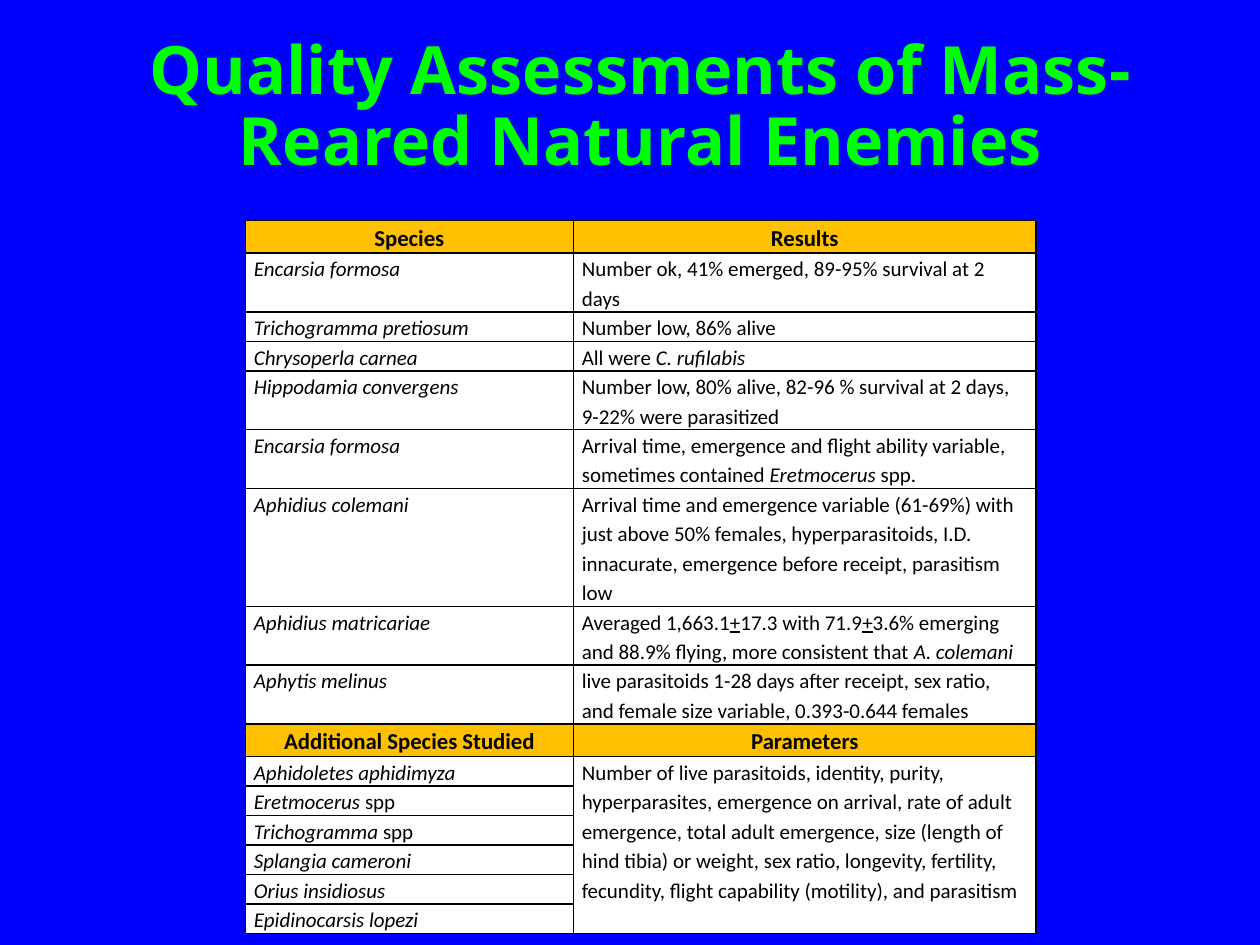
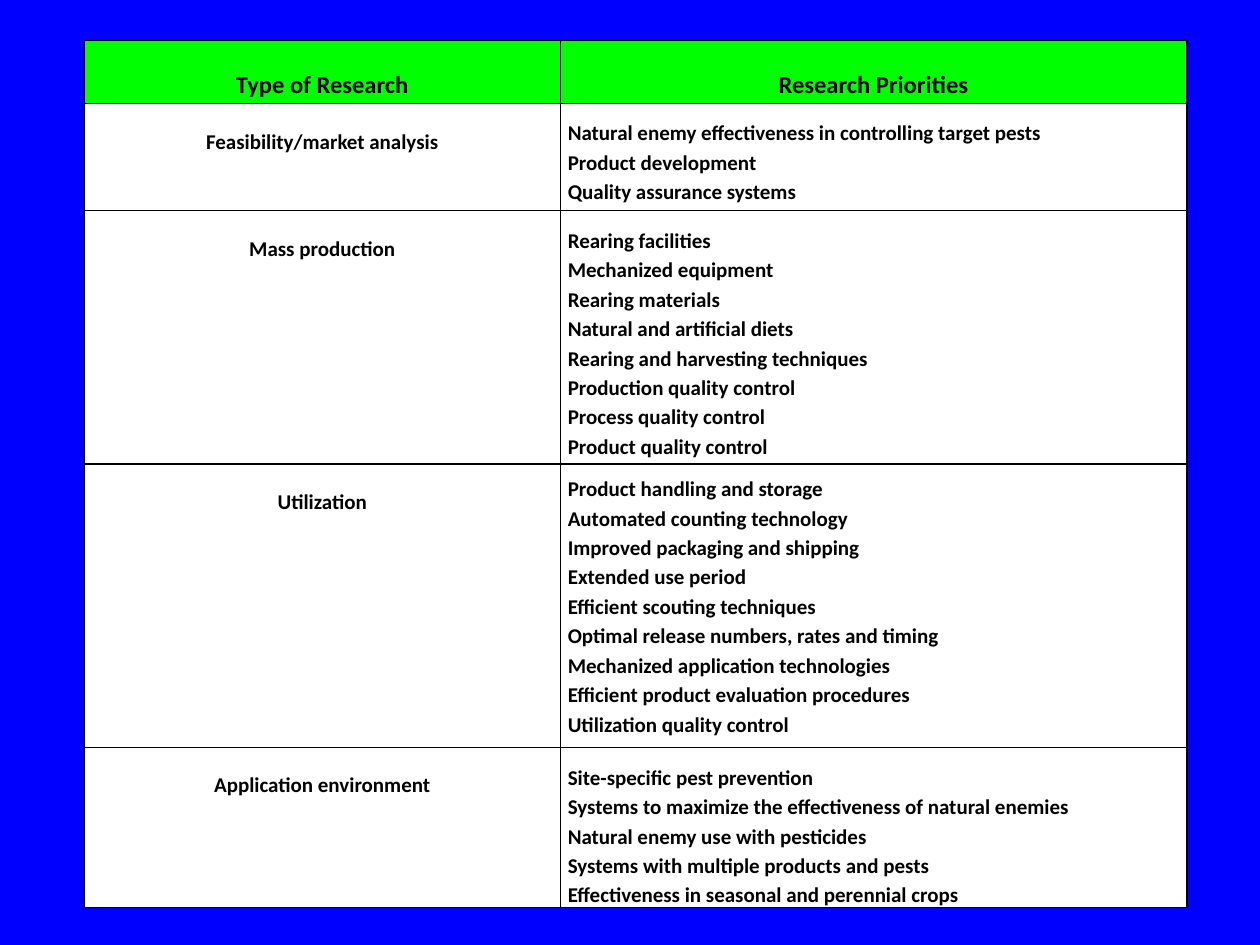
import lxml.etree
import pptx
import pptx.dml.color
import pptx.enum.text
import pptx.oxml.ns
import pptx.util

Pt = pptx.util.Pt
ALIGN = pptx.enum.text.PP_ALIGN

COLORS = {
    "background": "0000FF",
    "title": "00FF00",
    "species_header": "FFC000",
    "research_header": "00FF00",
    "body": "FFFFFF",
    "ink": "000000",
}
BODY_FONT = "Calibri"
TITLE_FONT = "Open Sans"
BODY_SIZE = 12
LINE_SPACING = 1.15

SPECIES_HEADER_HEIGHT = 18.6
SPECIES_LINE_HEIGHT = 16.8

SPECIES_RESULTS = [
    ("Encarsia formosa", 2, ["Number ok, 41% emerged, 89-95% survival at 2 days"]),
    ("Trichogramma pretiosum", 1, ["Number low, 86% alive"]),
    ("Chrysoperla carnea", 1, ["All were ", ("C. rufilabis", "i")]),
    ("Hippodamia convergens", 2,
     ["Number low, 80% alive, 82-96 % survival at 2 days, 9-22% were parasitized"]),
    ("Encarsia formosa", 2,
     ["Arrival time, emergence and flight ability variable, sometimes contained ",
      ("Eretmocerus", "i"), " spp."]),
    ("Aphidius colemani", 4,
     ["Arrival time and emergence variable (61-69%) with just above 50% females, "
      "hyperparasitoids, I.D. innacurate, emergence before receipt, parasitism low"]),
    ("Aphidius matricariae", 2,
     ["Averaged 1,663.1", ("+", "u"), "17.3 with 71.9", ("+", "u"),
      "3.6% emerging and 88.9% flying, more consistent that ", ("A. colemani", "i")]),
    ("Aphytis melinus", 2,
     ["live parasitoids 1-28 days after receipt, sex ratio, and female size variable, "
      "0.393-0.644 females"]),
]
ADDITIONAL_SPECIES = [
    [("Aphidoletes aphidimyza", "i")],
    [("Eretmocerus ", "i"), "spp"],
    [("Trichogramma ", "i"), "spp"],
    [("Splangia cameroni", "i")],
    [("Orius insidiosus", "i")],
    [("Epidinocarsis lopezi", "i")],
]
PARAMETERS = (
    "Number of live parasitoids, identity, purity, hyperparasites, emergence on arrival, "
    "rate of adult emergence, total adult emergence, size (length of hind tibia) or weight, "
    "sex ratio, longevity, fertility, fecundity, flight capability (motility), and parasitism"
)

RESEARCH_PRIORITIES = [
    ("Feasibility/market analysis", 61.2, 10, 1.0, [
        "Natural enemy effectiveness in controlling target pests",
        "Product development",
        "Quality assurance systems",
    ]),
    ("Mass production", 144.72, 8, LINE_SPACING, [
        "Rearing facilities",
        "Mechanized equipment",
        "Rearing materials",
        "Natural and artificial diets",
        "Rearing and harvesting techniques",
        "Production quality control",
        "Process quality control",
        "Product quality control",
    ]),
    ("Utilization", 162, 10, Pt(12), [
        "Product handling and storage",
        "Automated counting technology",
        "Improved packaging and shipping",
        "Extended use period",
        "Efficient scouting techniques",
        "Optimal release numbers, rates and timing",
        "Mechanized application technologies",
        "Efficient product evaluation procedures",
        "Utilization quality control",
    ]),
    ("Application environment", 91.44, 8, LINE_SPACING, [
        "Site-specific pest prevention",
        "Systems to maximize the effectiveness of natural enemies",
        "Natural enemy use with pesticides",
        "Systems with multiple products and pests",
        "Effectiveness in seasonal and perennial crops",
    ]),
]


def rgb(name):
    """Return the named palette colour."""
    return pptx.dml.color.RGBColor.from_string(COLORS[name])


def add_slide(deck):
    """Add a blank slide with the shared background."""
    slide = deck.slides.add_slide(deck.slide_layouts[6])
    slide.background.fill.solid()
    slide.background.fill.fore_color.rgb = rgb("background")
    return slide


def style_font(font, name, size, color, bold):
    """Apply the face, size, colour and weight."""
    font.name = name
    font.size = Pt(size)
    font.color.rgb = rgb(color)
    font.bold = bold


def add_title(slide, text, left, top, width, height):
    """Place the slide title, centred in its box."""
    frame = slide.shapes.add_textbox(Pt(left), Pt(top), Pt(width), Pt(height)).text_frame
    frame.word_wrap = True
    frame.vertical_anchor = pptx.enum.text.MSO_ANCHOR.MIDDLE
    heading = frame.paragraphs[0]
    heading.text = text
    heading.alignment = ALIGN.CENTER
    heading.line_spacing = 0.9
    style_font(heading.font, TITLE_FONT, 38, "title", True)


def add_grid(slide, left, top, widths, heights):
    """Add an unstyled table with the given column widths and row heights."""
    grid = slide.shapes.add_table(len(heights), len(widths), Pt(left), Pt(top),
                                  Pt(sum(widths)), Pt(sum(heights))).table
    grid.first_row = grid.horz_banding = False
    for column, width in zip(grid.columns, widths):
        column.width = Pt(width)
    for row, height in zip(grid.rows, heights):
        row.height = Pt(height)
    return grid


def rule_cell(cell, top=1, bottom=1):
    """Draw the four cell borders, before the fill in the XML order."""
    properties = cell._tc.get_or_add_tcPr()
    for side, weight in (("L", 1), ("R", 1), ("T", top), ("B", bottom)):
        border = lxml.etree.SubElement(properties, pptx.oxml.ns.qn(f"a:ln{side}"),
                                       w=str(Pt(weight)))
        fill = lxml.etree.SubElement(border, pptx.oxml.ns.qn("a:solidFill"))
        lxml.etree.SubElement(fill, pptx.oxml.ns.qn("a:srgbClr"), val=COLORS["ink"])


def fill_cell(cell, lines, fill="body", size=BODY_SIZE, bold=False, align=ALIGN.LEFT,
              spacing=LINE_SPACING, first_spacing=None, inset=4.9, inset_top=0,
              top_rule=1, bottom_rule=1):
    """Write lines of plain or styled pieces into a ruled, filled cell."""
    rule_cell(cell, top_rule, bottom_rule)
    cell.fill.solid()
    cell.fill.fore_color.rgb = rgb(fill)
    cell.margin_left = cell.margin_right = Pt(inset)
    cell.margin_top, cell.margin_bottom = Pt(inset_top), 0
    for index, pieces in enumerate(lines):
        frame = cell.text_frame
        line = frame.add_paragraph() if index else frame.paragraphs[0]
        line.alignment = align
        line.line_spacing = first_spacing if first_spacing and not index else spacing
        style_font(line.font, BODY_FONT, size, "ink", bold)
        for piece in pieces:
            text, style = (piece, "") if isinstance(piece, str) else piece
            run = line.add_run()
            run.text = text
            if style == "i":
                run.font.italic = True
            elif style == "u":
                run.font.underline = True


def add_species_table(slide, left, top, widths):
    """Place the species results and the additional species below them."""
    result_heights = [count * SPECIES_LINE_HEIGHT for _, count, _ in SPECIES_RESULTS]
    additional_heights = [SPECIES_LINE_HEIGHT] * len(ADDITIONAL_SPECIES)
    grid = add_grid(slide, left, top, widths,
                    [SPECIES_HEADER_HEIGHT, *result_heights,
                     SPECIES_HEADER_HEIGHT, *additional_heights])
    second_header = len(SPECIES_RESULTS) + 1
    headers = [(0, ("Species", "Results"), 1),
               (second_header, ("Additional Species Studied", "Parameters"), 1.5)]
    for row, labels, top_rule in headers:
        for column, label in enumerate(labels):
            fill_cell(grid.cell(row, column), [[label]], "species_header", 13, True,
                      ALIGN.CENTER, top_rule=top_rule)
    for row, (species, _, result) in enumerate(SPECIES_RESULTS, 1):
        bottom_rule = 1.5 if row == second_header - 1 else 1
        fill_cell(grid.cell(row, 0), [[(species, "i")]], bottom_rule=bottom_rule)
        fill_cell(grid.cell(row, 1), [result], bottom_rule=bottom_rule)
    first_additional = second_header + 1
    last_row = second_header + len(ADDITIONAL_SPECIES)
    grid.cell(first_additional, 1).merge(grid.cell(last_row, 1))
    for row, species in enumerate(ADDITIONAL_SPECIES, first_additional):
        fill_cell(grid.cell(row, 0), [species])
        parameters = [[PARAMETERS]] if row == first_additional else []
        fill_cell(grid.cell(row, 1), parameters)


def add_research_table(slide, left, top, widths):
    """Place the research types beside their priorities."""
    heights = [height for _, height, _, _, _ in RESEARCH_PRIORITIES]
    grid = add_grid(slide, left, top, widths, [36, *heights])
    for column, label in enumerate(("Type of Research", "Research Priorities")):
        fill_cell(grid.cell(0, column), [[label]], "research_header", 14, True,
                  ALIGN.CENTER, 2.0, inset=4.3)
    for row, (research, _, gap, first_spacing, priorities) in enumerate(RESEARCH_PRIORITIES, 1):
        fill_cell(grid.cell(row, 0), [[research]], bold=True, align=ALIGN.CENTER,
                  spacing=2.0, inset=4.3)
        fill_cell(grid.cell(row, 1), [[priority] for priority in priorities], bold=True,
                  first_spacing=first_spacing, inset=4.3, inset_top=gap)


def main():
    """Build both slides and save the deck."""
    deck = pptx.Presentation()
    deck.slide_width, deck.slide_height = Pt(720), Pt(540)
    assessments = add_slide(deck)
    add_species_table(assessments, 140.2, 126, [187.4, 264.5])
    add_title(assessments, "Quality Assessments of Mass-Reared Natural Enemies",
              54, 12.24, 624, 99.4)
    add_research_table(add_slide(deck), 48.2, 23.2, [272, 358])
    deck.save("out.pptx")


if __name__ == "__main__":
    main()
